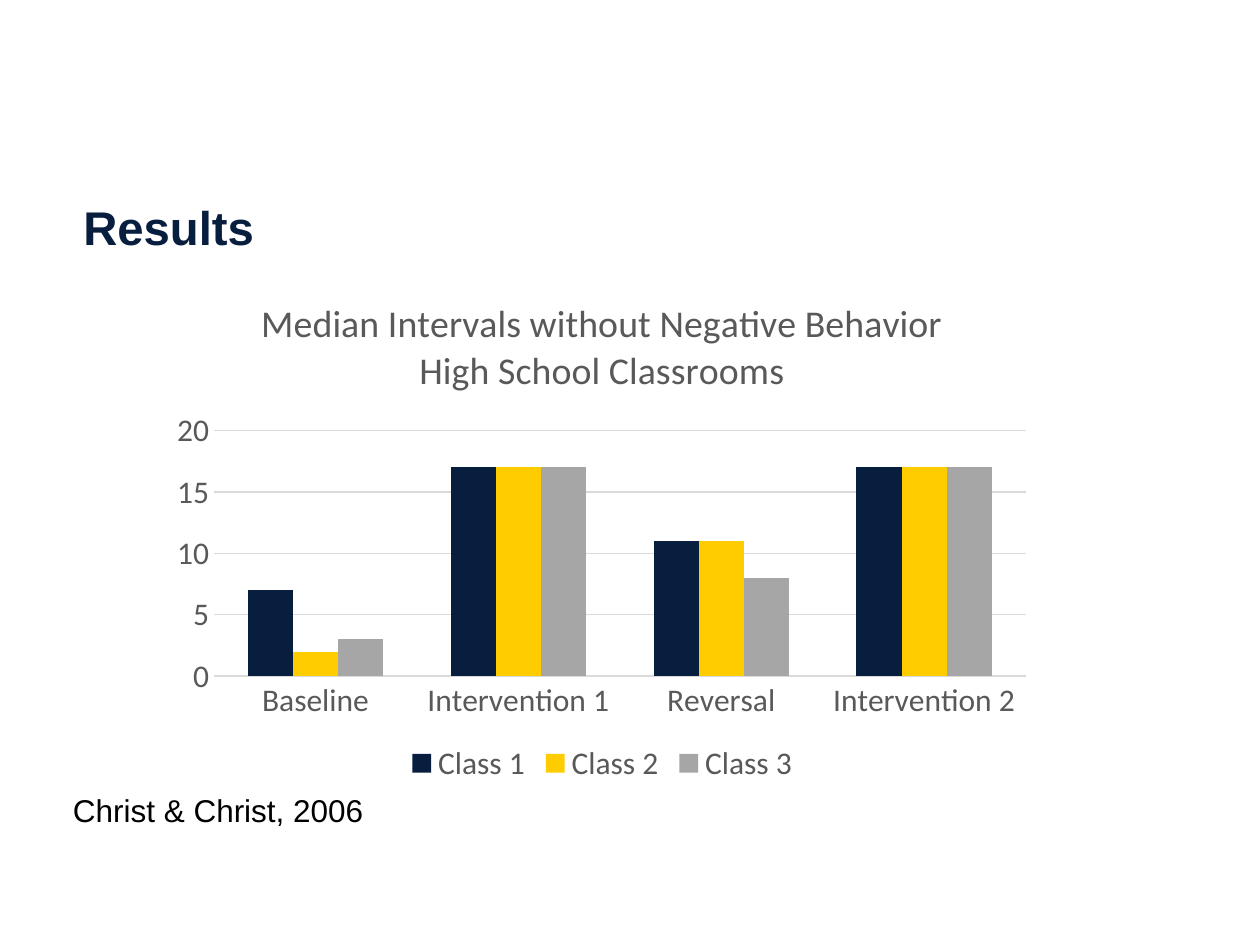
from lxml.etree import SubElement
from pptx import Presentation
from pptx.chart.data import CategoryChartData
from pptx.dml.color import RGBColor
from pptx.enum.chart import XL_CHART_TYPE, XL_LEGEND_POSITION, XL_TICK_MARK
from pptx.enum.text import MSO_ANCHOR, MSO_AUTO_SIZE, PP_ALIGN
from pptx.oxml.ns import qn
from pptx.util import Cm, Pt

NAVY = RGBColor(0x08, 0x1E, 0x3F)
GOLD = RGBColor(0xFF, 0xCC, 0x00)
SILVER = RGBColor(0xA6, 0xA6, 0xA6)
TEXT_GREY = RGBColor(0x59, 0x59, 0x59)
LINE_GREY = RGBColor(0xD9, 0xD9, 0xD9)
BLACK = RGBColor(0, 0, 0)


def set_font(font, name, size, color, bold=False):
    font.name = name
    font.size = Pt(size)
    font.color.rgb = color
    font.bold = bold


deck = Presentation()
deck.slide_width, deck.slide_height = Cm(25.4), Cm(19.05)
page = deck.slides.add_slide(deck.slide_layouts[5])

# Chart
data = CategoryChartData()
data.categories = ["Baseline", "Intervention 1", "Reversal", "Intervention 2"]
data.add_series("Class 1", [7, 17, 11, 17])
data.add_series("Class 2", [2, 17, 11, 17])
data.add_series("Class 3", [3, 17, 8, 17])
chart = page.shapes.add_chart(
    XL_CHART_TYPE.COLUMN_CLUSTERED, Cm(3.25), Cm(5.59), Cm(17.78), Cm(10.31), data
).chart
set_font(chart.font, "Calibri", 18, TEXT_GREY)

chart_title = chart.chart_title.text_frame
chart_title.text = "Median Intervals without Negative Behavior\nHigh School Classrooms"
for para in chart_title.paragraphs:
    set_font(para.font, "Calibri", 21.6, TEXT_GREY)
chart.chart_title.include_in_layout = False

chart.has_legend = True
chart.legend.position = XL_LEGEND_POSITION.BOTTOM
chart.legend.include_in_layout = False
set_font(chart.legend.font, "Calibri", 18, TEXT_GREY)

for axis in (chart.category_axis, chart.value_axis):
    axis.major_tick_mark = XL_TICK_MARK.NONE
    axis.minor_tick_mark = XL_TICK_MARK.NONE
    set_font(axis.tick_labels.font, "Calibri", 18, TEXT_GREY)
chart.value_axis.minimum_scale = 0
chart.value_axis.maximum_scale = 20
chart.value_axis.major_unit = 5
chart.value_axis.format.line.fill.background()
for line in (chart.category_axis.format.line, chart.value_axis.major_gridlines.format.line):
    line.color.rgb = LINE_GREY
    line.width = Pt(0.75)

plot = chart.plots[0]
plot.vary_by_categories = False
plot.gap_width = 150
plot.overlap = 0
for series, color in zip(plot.series, (NAVY, GOLD, SILVER)):
    series.format.fill.solid()
    series.format.fill.fore_color.rgb = color

# Fixed plot area, as fractions of the chart
plot_area = chart.element.find(".//" + qn("c:plotArea"))
for old_layout in plot_area.findall(qn("c:layout")):
    plot_area.remove(old_layout)
layout = SubElement(plot_area, qn("c:layout"))
plot_area.insert(0, layout)
manual = SubElement(layout, qn("c:manualLayout"))
for tag, value in (
    ("layoutTarget", "inner"), ("xMode", "edge"), ("yMode", "edge"),
    ("x", "0.06"), ("y", "0.3"), ("w", "0.92"), ("h", "0.48"),
):
    SubElement(manual, qn("c:" + tag)).set("val", value)

# Title
title = page.shapes.title
title.left, title.top, title.width, title.height = Cm(1.22), Cm(3.48), Cm(23.52), Cm(1.9)
frame = title.text_frame
frame.text = "Results"
frame.auto_size = MSO_AUTO_SIZE.NONE
frame.vertical_anchor = MSO_ANCHOR.BOTTOM
frame.margin_left = frame.margin_right = Cm(0.46)
frame.margin_top = frame.margin_bottom = Cm(0.23)
para = frame.paragraphs[0]
para.alignment = PP_ALIGN.LEFT
para.line_spacing = 0.9
set_font(para.font, "Arial", 27, NAVY, bold=True)

# Citation
citation = page.shapes.add_textbox(Cm(1.22), Cm(15.82), Cm(6.43), Cm(1.02)).text_frame
citation.text = "Christ & Christ, 2006"
citation.word_wrap = False
citation.auto_size = MSO_AUTO_SIZE.SHAPE_TO_FIT_TEXT
set_font(citation.paragraphs[0].font, "Arial", 18, BLACK)

deck.save("out.pptx")
